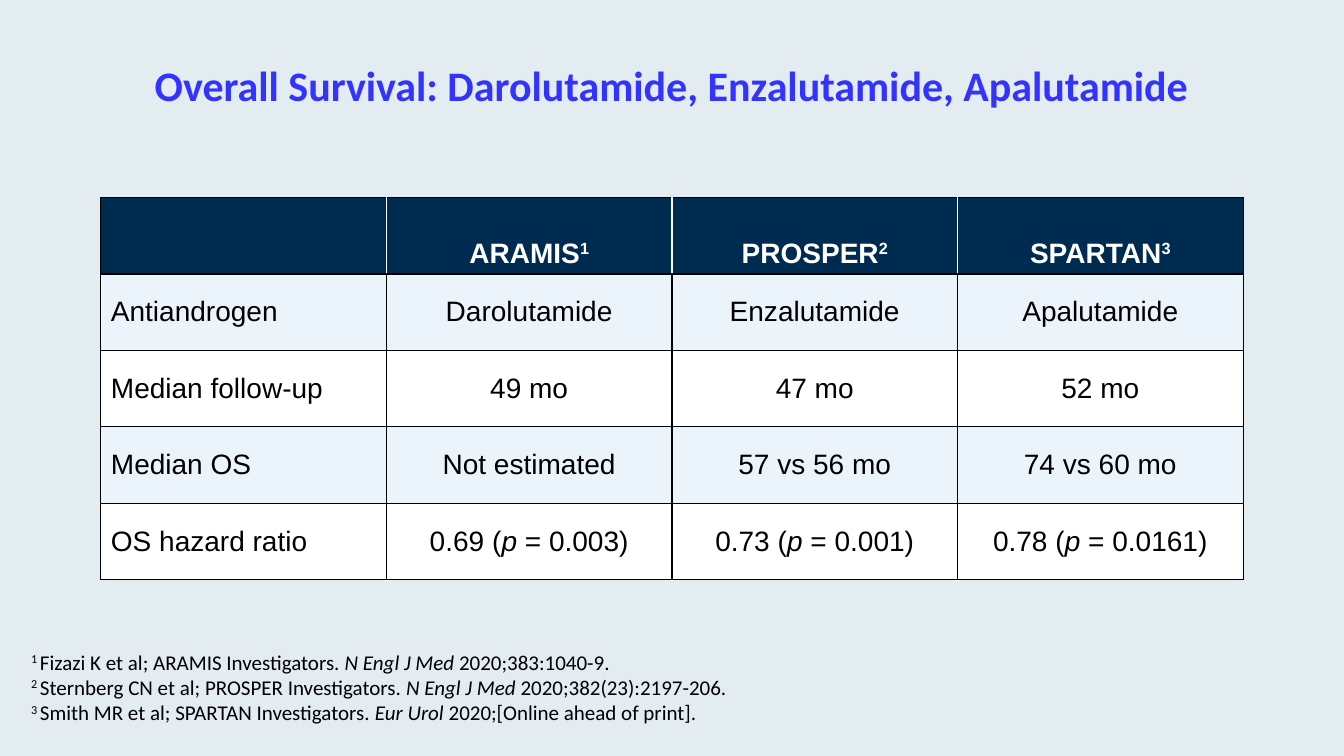
from dataclasses import dataclass

from lxml import etree
from pptx import Presentation
from pptx.dml.color import RGBColor
from pptx.enum import text
from pptx.oxml import ns
from pptx.util import Inches, Pt


@dataclass(frozen=True)
class Theme:
    background: str = "E2ECF1"
    title: str = "3333FF"
    header: str = "002B51"
    band: str = "ECF4FB"
    white: str = "FFFFFF"
    black: str = "000000"
    heading_font: str = "Calibri"
    table_font: str = "Arial"
    title_size: int = 30
    table_size: int = 20
    note_size: int = 15


THEME = Theme()
LEFT, CENTER = text.PP_ALIGN.LEFT, text.PP_ALIGN.CENTER

TITLE = "Overall Survival: Darolutamide, Enzalutamide, Apalutamide"
ROWS = [
    ["", "ARAMIS^1^", "PROSPER^2^", "SPARTAN^3^"],
    ["Antiandrogen", "Darolutamide", "Enzalutamide", "Apalutamide"],
    ["Median follow-up", "49 mo", "47 mo", "52 mo"],
    ["Median OS", "Not estimated", "57 vs 56 mo", "74 vs 60 mo"],
    ["OS hazard ratio", "0.69 (_p_ = 0.003)", "0.73 (_p_ = 0.001)", "0.78 (_p_ = 0.0161)"],
]
REFERENCES = [
    "^1 ^Fizazi K et al; ARAMIS Investigators. _N Engl J Med _2020;383:1040-9.",
    "^2 ^Sternberg CN et al; PROSPER Investigators. _N Engl J Med _2020;382(23):2197-206.",
    "^3 ^Smith MR et al; SPARTAN Investigators. _Eur Urol _2020;[Online ahead of print].",
]


def write(tf, lines, *, size, font, color=THEME.black, bold=False, align=LEFT, spacing=None):
    """Fill a text frame; _..._ marks italic and ^...^ marks superscript."""
    for n, line in enumerate(lines):
        p = tf.add_paragraph() if n else tf.paragraphs[0]
        p.alignment = align
        p.line_spacing = spacing
        for i, part in enumerate(line.split("_")):
            for j, piece in enumerate(part.split("^")):
                if not piece:
                    continue
                r = p.add_run()
                r.text = piece
                r.font.size = Pt(size)
                r.font.name = font
                r.font.bold = bold
                r.font.italic = i % 2 == 1
                r.font.color.rgb = RGBColor.from_string(color)
                if j % 2:
                    r.font._element.set("baseline", "30000")


def set_borders(cell, **colors):
    """Draw 1 pt cell edges; L, R, T and B give the colours."""
    tc_pr = cell._tc.get_or_add_tcPr()
    for side, color in colors.items():
        ln = etree.SubElement(tc_pr, ns.qn(f"a:ln{side}"), w=str(Pt(1)))
        fill = etree.SubElement(ln, ns.qn("a:solidFill"))
        etree.SubElement(fill, ns.qn("a:srgbClr"), val=color)


def add_title(s, x, y, w, h):
    tf = s.shapes.add_textbox(Inches(x), Inches(y), Inches(w), Inches(h)).text_frame
    tf.word_wrap = True
    tf.vertical_anchor = text.MSO_ANCHOR.MIDDLE
    tf.margin_left = tf.margin_right = tf.margin_top = tf.margin_bottom = 0
    write(tf, [TITLE], size=THEME.title_size, font=THEME.heading_font,
          color=THEME.title, bold=True, align=CENTER, spacing=0.88)


def add_survival_table(s, x, y, w, h):
    n_rows, n_cols = len(ROWS), len(ROWS[0])
    table = s.shapes.add_table(n_rows, n_cols, Inches(x), Inches(y),
                               Inches(w), Inches(h)).table
    for i, row in enumerate(ROWS):
        table.rows[i].height = Inches(h / n_rows)
        is_header = i == 0
        inner = THEME.white if is_header else THEME.black
        if is_header:
            fill = THEME.header
        else:
            fill = THEME.band if i % 2 else THEME.white
        for j, value in enumerate(row):
            cell = table.cell(i, j)
            set_borders(cell,
                        L=inner if j else THEME.black,
                        R=inner if j < n_cols - 1 else THEME.black,
                        T=THEME.black, B=THEME.black)
            cell.fill.solid()
            cell.fill.fore_color.rgb = RGBColor.from_string(fill)
            cell.vertical_anchor = (text.MSO_ANCHOR.BOTTOM if is_header
                                    else text.MSO_ANCHOR.MIDDLE)
            write(cell.text_frame, [value], size=THEME.table_size, font=THEME.table_font,
                  color=inner, bold=is_header, align=CENTER if j else LEFT)


def add_references(s, x, y, w, h):
    tf = s.shapes.add_textbox(Inches(x), Inches(y), Inches(w), Inches(h)).text_frame
    tf.word_wrap = False
    write(tf, REFERENCES, size=THEME.note_size, font=THEME.heading_font)


def main():
    prs = Presentation()
    prs.slide_width, prs.slide_height = Inches(13.33), Inches(7.5)
    s = prs.slides.add_slide(prs.slide_layouts[6])
    s.background.fill.solid()
    s.background.fill.fore_color.rgb = RGBColor.from_string(THEME.background)
    add_title(s, 1, 0.25, 11.33, 1.25)
    add_survival_table(s, 1, 1.96, 11.33, 3.79)
    add_references(s, 0.21, 6.39, 7.42, 0.86)
    prs.save("out.pptx")


if __name__ == "__main__":
    main()
